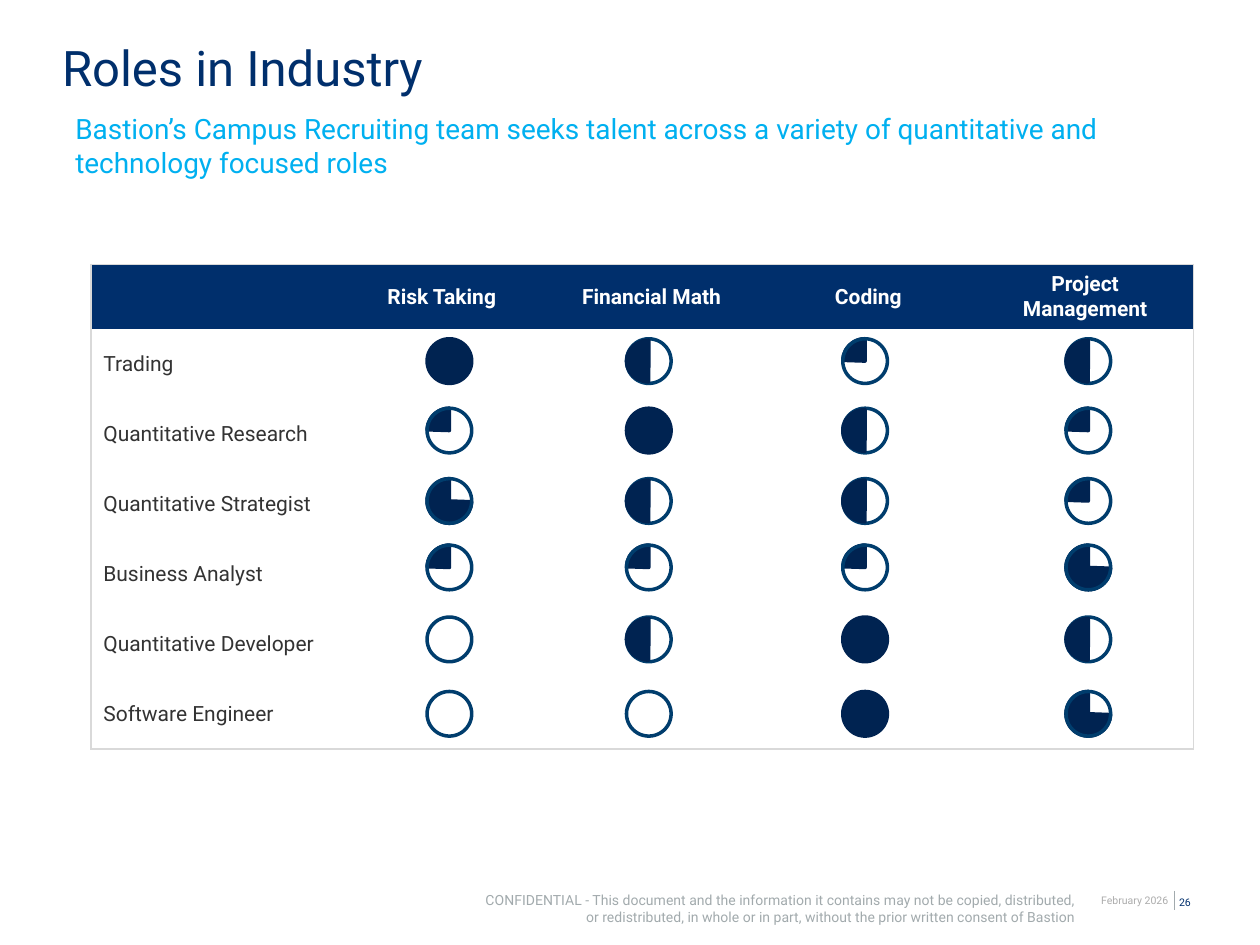
from dataclasses import dataclass

from lxml.etree import SubElement
from pptx import Presentation
from pptx.dml.color import RGBColor
from pptx.enum.shapes import MSO_CONNECTOR, MSO_SHAPE
from pptx.enum.text import MSO_ANCHOR as ANCHOR, PP_ALIGN as ALIGN
from pptx.oxml.ns import qn
from pptx.util import Cm, Pt


@dataclass(frozen=True)
class Theme:
    font: str = "Roboto"
    navy: str = "002F6C"
    sky: str = "00B0F0"
    white: str = "FFFFFF"
    body: str = "333333"
    border: str = "D9D9D9"
    disc: str = "002351"
    ring: str = "003D6D"
    muted: str = "A2AAAD"
    date: str = "ACACAC"
    title_pt: int = 28
    subtitle_pt: int = 16
    table_pt: int = 12
    notice_pt: int = 8
    small_pt: int = 6


THEME = Theme()

SKILLS = ["Risk Taking", "Financial Math", "Coding", "Project Management"]
# Quarters filled for each skill
ROLES = {
    "Trading": (4, 2, 1, 2),
    "Quantitative Research": (1, 4, 2, 1),
    "Quantitative Strategist": (3, 2, 2, 1),
    "Business Analyst": (1, 1, 1, 3),
    "Quantitative Developer": (0, 2, 4, 2),
    "Software Engineer": (0, 0, 4, 3),
}
COL_WIDTHS = [5.03, 4.09, 4.37, 4.37, 4.37]
HEADER_HEIGHT, ROW_HEIGHT = 1.31, 1.41

# Disc positions inside the table
DISC_SIZE = 0.9
DISC_LEFTS = [6.78, 10.8, 15.16, 19.66]
DISC_TOPS = [1.5, 2.9, 4.32, 5.66, 7.11, 8.61]
PIE_STARTS = {1: 109.08, 2: 54.31, 3: 1.25}
PIE_END = 162


def rgb(color):
    return RGBColor.from_string(color)


def write(tf, text, *, size, color, bold=False, align=ALIGN.LEFT,
          anchor=ANCHOR.TOP, inset=None, spacing=None, after=None):
    """Put one formatted paragraph in a text frame."""
    tf.word_wrap = True
    tf.vertical_anchor = anchor
    if inset is not None:
        tf.margin_left = tf.margin_right = Cm(inset)
        tf.margin_top = tf.margin_bottom = Cm(inset)
    p = tf.paragraphs[0]
    p.alignment = align
    if spacing:
        p.line_spacing = Pt(spacing)
    if after:
        p.space_after = Pt(after)
    r = p.add_run()
    r.text = text
    r.font.name, r.font.size, r.font.bold = THEME.font, Pt(size), bold
    r.font.color.rgb = rgb(color)


def add_text(slide, box, text, **fmt):
    sp = slide.shapes.add_textbox(*map(Cm, box))
    write(sp.text_frame, text, **fmt)


def add_heading(slide, x, y, w):
    """Title and subtitle."""
    title = slide.shapes.title
    title.left, title.top, title.width, title.height = map(Cm, (x, y, w, 1.27))
    write(title.text_frame, "Roles in Industry", size=THEME.title_pt,
          color=THEME.navy, anchor=ANCHOR.MIDDLE, inset=0)
    add_text(slide, (x + 0.02, y + 1.42, w - 0.33, 1.63),
             "Bastion’s Campus Recruiting team seeks talent across a variety "
             "of quantitative and technology focused roles",
             size=THEME.subtitle_pt, color=THEME.sky, after=6)


def set_borders(cell, visible):
    """Draw the given sides (L, R, T, B) and clear the others."""
    tc_pr = cell._tc.get_or_add_tcPr()
    for i, side in enumerate("LRTB"):
        ln = SubElement(tc_pr, qn(f"a:ln{side}"), w=str(Pt(1)))
        if side in visible:
            fill = SubElement(ln, qn("a:solidFill"))
            SubElement(fill, qn("a:srgbClr"), val=THEME.border)
        else:
            SubElement(ln, qn("a:noFill"))
        tc_pr.insert(i, ln)


def add_disc(slide, x, y, quarters):
    """A ring filled by the given number of quarters."""
    shapes = slide.shapes.add_group_shape().shapes

    def part(kind, top, height, fill, line):
        sp = shapes.add_shape(kind, Cm(x), Cm(top), Cm(DISC_SIZE), Cm(height))
        sp.shadow.inherit = False
        if fill:
            sp.fill.solid()
            sp.fill.fore_color.rgb = rgb(fill)
        else:
            sp.fill.background()
        sp.line.color.rgb = rgb(line)
        sp.line.width = Pt(2)
        return sp

    def ring():
        full = quarters == 4
        part(MSO_SHAPE.OVAL, y, DISC_SIZE, THEME.disc if full else None,
             THEME.disc if full else THEME.ring)

    def pie():
        inset = 0.03 if quarters == 2 else 0
        sp = part(MSO_SHAPE.PIE, y + inset, DISC_SIZE - 2 * inset,
                  THEME.disc, THEME.disc)
        sp.adjustments[0] = PIE_STARTS[quarters]
        sp.adjustments[1] = PIE_END

    # The half pie lies over its ring, the other pies under it
    if quarters in (1, 3):
        pie()
    ring()
    if quarters == 2:
        pie()


def add_role_matrix(slide, x, y):
    """Table of roles with one disc for each skill."""
    rows, cols = len(ROLES) + 1, len(COL_WIDTHS)
    height = HEADER_HEIGHT + ROW_HEIGHT * len(ROLES)
    table = slide.shapes.add_table(rows, cols, Cm(x), Cm(y),
                                   Cm(sum(COL_WIDTHS)), Cm(height)).table
    table.first_row = table.horz_banding = False
    for column, width in zip(table.columns, COL_WIDTHS):
        column.width = Cm(width)
    for i, row in enumerate(table.rows):
        row.height = Cm(ROW_HEIGHT if i else HEADER_HEIGHT)

    # Fills and the outer frame
    for i in range(rows):
        for j in range(cols):
            cell = table.cell(i, j)
            if i == 0:
                cell.fill.solid()
                cell.fill.fore_color.rgb = rgb(THEME.navy)
            else:
                cell.fill.background()
            edges = {"L": j == 0, "R": j == cols - 1,
                     "T": i == 0, "B": i == rows - 1}
            set_borders(cell, [side for side, on in edges.items() if on])

    # Labels
    for j, skill in enumerate(SKILLS, 1):
        cell = table.cell(0, j)
        write(cell.text_frame, skill, size=THEME.table_pt, color=THEME.white,
              bold=True, align=ALIGN.CENTER)
        cell.vertical_anchor = ANCHOR.MIDDLE
    for i, role in enumerate(ROLES, 1):
        cell = table.cell(i, 0)
        write(cell.text_frame, role, size=THEME.table_pt, color=THEME.body)
        cell.vertical_anchor = ANCHOR.MIDDLE

    # Discs
    for top, levels in zip(DISC_TOPS, ROLES.values()):
        for left, quarters in zip(DISC_LEFTS, levels):
            add_disc(slide, x + left, y + top, quarters)


def add_footer(slide, x, y):
    """Notice, date, divider and page number."""
    fmt = dict(anchor=ANCHOR.MIDDLE, inset=0)
    add_text(slide, (x, y, 11.99, 0.69),
             "CONFIDENTIAL - This document and the information it contains may "
             "not be copied, distributed, or redistributed, in whole or in "
             "part, without the prior written consent of Bastion",
             size=THEME.notice_pt, color=THEME.muted, align=ALIGN.RIGHT,
             spacing=10, **fmt)
    add_text(slide, (x + 11.31, y, 2.54, 0.38), "February 2026",
             size=THEME.small_pt, color=THEME.date, align=ALIGN.RIGHT, **fmt)
    divider = slide.shapes.add_connector(
        MSO_CONNECTOR.STRAIGHT, Cm(x + 13.97), Cm(y), Cm(x + 13.97), Cm(y + 0.38))
    divider.line.color.rgb = rgb(THEME.muted)
    divider.line.width = Pt(0.25)
    SubElement(divider._element.spPr, qn("a:effectLst"))
    add_text(slide, (x + 14.07, y - 0.1, 0.64, 0.64), "26",
             size=THEME.small_pt, color=THEME.navy, **fmt)


def main():
    prs = Presentation()
    prs.slide_width, prs.slide_height = Cm(25.4), Cm(19.05)
    slide = prs.slides.add_slide(prs.slide_layouts[5])
    add_heading(slide, 1.25, 0.71, 22.86)
    add_role_matrix(slide, 1.83, 5.33)
    add_footer(slide, 9.7, 17.96)
    prs.save("out.pptx")


if __name__ == "__main__":
    main()
